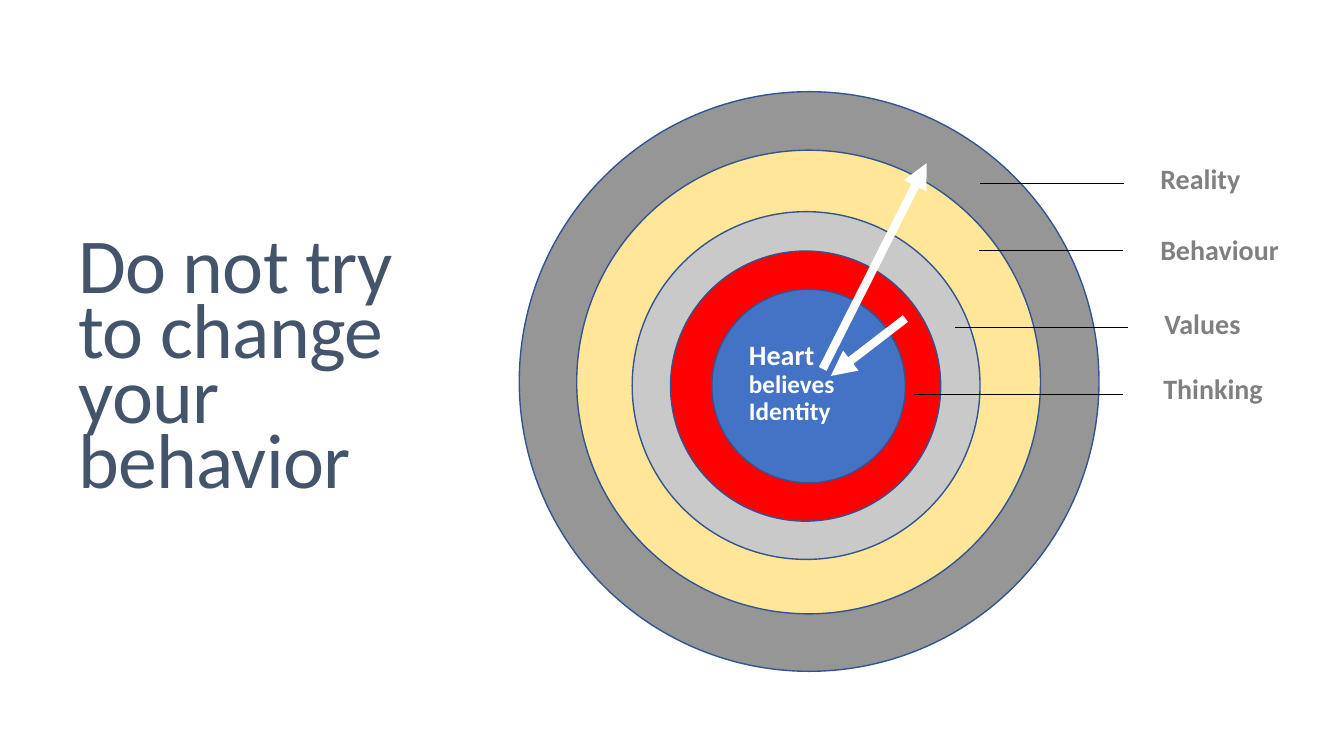
"""Build a slide with a target of nested circles, from heart to reality."""
from lxml import etree
from pptx import Presentation
from pptx.dml.color import RGBColor
from pptx.enum.shapes import MSO_CONNECTOR, MSO_SHAPE
from pptx.enum.text import MSO_ANCHOR
from pptx.oxml.ns import qn
from pptx.util import Inches, Pt

STRAIGHT = MSO_CONNECTOR.STRAIGHT
OVAL = MSO_SHAPE.OVAL
TOP, MIDDLE = MSO_ANCHOR.TOP, MSO_ANCHOR.MIDDLE

COLORS = {
    "title": "44546A", "label": "808080", "outline": "325491",
    "white": "FFFFFF", "black": "000000", "reality": "969696",
    "behaviour": "FFE699", "values": "C9C9C9", "thinking": "FF0000",
    "heart": "4472C4",
}
FONT = "Calibri"

TITLE = "Do not try to change your behavior"
HEART_LINES = [("Heart ", 20), ("believes", 18), ("Identity", 18)]
RINGS = [
    ("reality", 5.15, 0.91, 5.75),
    ("behaviour", 5.72, 1.49, 4.6),
    ("values", 6.27, 2.1, 3.45),
    ("thinking", 6.65, 2.49, 2.68),
    ("heart", 7.06, 2.87, 1.92),
]
LABELS = [
    ("Reality", 11.41, 1.62, 0.8),
    ("Behaviour", 11.41, 2.29, 0.9),
    ("Values", 11.45, 3.06, 0.8),
    ("Thinking", 11.44, 3.67, 0.9),
]
LEADERS = [(9.72, 11.15, 1.82), (9.71, 11.14, 2.48),
           (9.47, 11.19, 3.25), (9.07, 11.14, 3.91)]
ARROWS = [(8.16, 3.66, 9.19, 1.62), (8.98, 3.16, 8.24, 3.73)]


def add_text(slide, place, lines, color, spacing, anchor=TOP, bold=True):
    box = slide.shapes.add_textbox(*map(Inches, place))
    box.text_frame.word_wrap = True
    box.text_frame.vertical_anchor = anchor
    para = box.text_frame.paragraphs[0]
    para.line_spacing = spacing
    para.space_after = Pt(6)
    spans = []
    for text, size in lines:
        if spans:
            para.add_line_break()
        span = para.add_run()
        span.text = text
        font_format = {"name": FONT, "size": Pt(size), "bold": bold}
        for name, value in font_format.items():
            setattr(span.font, name, value)
        span.font.color.rgb = RGBColor.from_string(COLORS[color])
        spans.append(span)
    return spans


def add_text_shadow(span):
    effects = etree.Element(qn("a:effectLst"))
    shadow = etree.SubElement(effects, qn("a:outerShdw"), blurRad="38100",
                              dist="38100", dir="2700000", algn="tl")
    shade = etree.SubElement(shadow, qn("a:srgbClr"), val=COLORS["black"])
    etree.SubElement(shade, qn("a:alpha"), val="43000")
    span.font._element.find(qn("a:solidFill")).addnext(effects)


def add_ring(slide, color, left, top, size):
    ring = slide.shapes.add_shape(OVAL, *map(Inches, (left, top, size, size)))
    ring.shadow.inherit = False
    ring.fill.solid()
    ring.fill.fore_color.rgb = RGBColor.from_string(COLORS[color])
    ring.line.color.rgb = RGBColor.from_string(COLORS["outline"])
    ring.line.width = Pt(1)


def add_line(slide, ends, color, width, arrow=False):
    line = slide.shapes.add_connector(STRAIGHT, *map(Inches, ends))
    line.line.color.rgb = RGBColor.from_string(COLORS[color])
    line.line.width = Pt(width)
    properties = line._element.spPr
    if arrow:
        etree.SubElement(properties.find(qn("a:ln")), qn("a:tailEnd"), type="triangle")
    etree.SubElement(properties, qn("a:effectLst"))


def main():
    deck = Presentation()
    deck.slide_width, deck.slide_height = Inches(13.33), Inches(7.5)
    slide = deck.slides.add_slide(deck.slide_layouts[6])

    title_spans = add_text(slide, (0.68, 2.2, 3.93, 2.97), [(TITLE, 55.5)],
                           "title", 0.7, MIDDLE, False)
    title_spans[0].font._element.set("spc", "-50")
    for ring in RINGS:
        add_ring(slide, *ring)
    for text, left, top, spacing in LABELS:
        add_text(slide, (left, top, 1.64, 0.39), [(text, 20)], "label", spacing)
    for span in add_text(slide, (7.33, 3.34, 1.6, 1.01), HEART_LINES, "white", 0.9):
        add_text_shadow(span)
    for start, end, height in LEADERS:
        add_line(slide, (start, height, end, height), "black", 0.5)
    for ends in ARROWS:
        add_line(slide, ends, "white", 6, arrow=True)
    deck.save("out.pptx")


if __name__ == "__main__":
    main()
